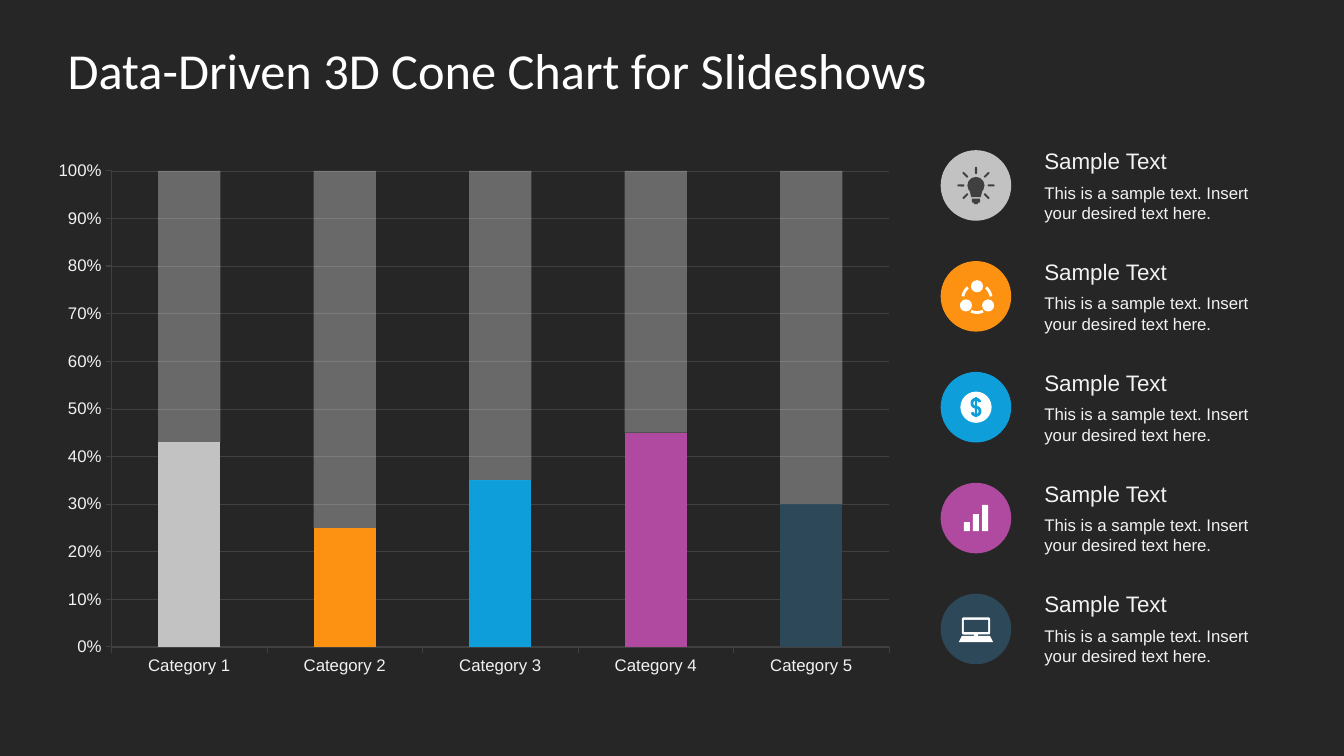
from math import cos, radians, sin

from lxml import etree
from pptx import Presentation
from pptx.chart import data
from pptx.dml.color import RGBColor
from pptx.enum import chart as chart_enum, shapes, text
from pptx.oxml import ns
from pptx.util import Inches, Pt

COLORS = {
    "background": "262626", "white": "FFFFFF", "body": "F2F2F2", "dark": "404040",
    "gray": "C2C2C2", "orange": "FD9212", "blue": "0E9EDA", "purple": "B04AA0",
    "navy": "2D4859",
}
RGB = {name: RGBColor.from_string(value) for name, value in COLORS.items()}
ACCENTS = ["gray", "orange", "blue", "purple", "navy"]
SHAPE = shapes.MSO_SHAPE

prs = Presentation()
prs.slide_width, prs.slide_height = Inches(13.33), Inches(7.5)
slide = prs.slides.add_slide(prs.slide_layouts[6])
slide.background.fill.solid()
slide.background.fill.fore_color.rgb = RGB["background"]


def add_solid(kind, x, y, width, height, color, rotation=0):
    """Add a borderless shape centred on (x, y)."""
    solid = slide.shapes.add_shape(kind, Inches(x - width / 2), Inches(y - height / 2),
                                   Inches(width), Inches(height))
    solid.fill.solid()
    solid.fill.fore_color.rgb = RGB[color]
    solid.line.fill.background()
    solid.shadow.inherit = False
    solid.rotation = rotation
    return solid


def add_arc(x, y, radius, start, end, color, weight):
    """Stroke an arc; angles are degrees clockwise from the right."""
    angles = [radians(start + (end - start) * step / 24) for step in range(25)]
    points = [(Inches(x + radius * cos(a)), Inches(y + radius * sin(a))) for a in angles]
    builder = slide.shapes.build_freeform(*points[0])
    builder.add_line_segments(points[1:], close=False)
    arc = builder.convert_to_shape()
    arc.fill.background()
    arc.line.color.rgb = RGB[color]
    arc.line.width = Pt(weight)
    arc.shadow.inherit = False


# Chart
shares = [43, 25, 35, 45, 30]
chart_data = data.CategoryChartData()
chart_data.categories = [f"Category {n}" for n in range(1, 6)]
chart_data.add_series("Series 1", shares)
chart_data.add_series("Series 2", [100 - share for share in shares])
chart = slide.shapes.add_chart(
    chart_enum.XL_CHART_TYPE.COLUMN_STACKED_100,
    Inches(0.41), Inches(1.5), Inches(8.58), Inches(5.3), chart_data).chart
chart.has_legend = False
chart.has_title = False
chart.font.name, chart.font.size = "Arial", Pt(12)
chart.font.color.rgb = RGB["body"]

plot = chart.plots[0]
plot.gap_width, plot.overlap = 150, 100
plot.vary_by_categories = False
filled, remainder = plot.series
for index, accent in enumerate(ACCENTS):
    bar = filled.points[index].format.fill
    bar.solid()
    bar.fore_color.rgb = RGB[accent]
remainder.format.fill.solid()
remainder.format.fill.fore_color.rgb = RGB["white"]
remainder_color = remainder._element.find(".//" + ns.qn("a:srgbClr"))
etree.SubElement(remainder_color, ns.qn("a:alpha"), val="31000")

for axis in (chart.category_axis, chart.value_axis):
    axis.major_tick_mark = chart_enum.XL_TICK_MARK.OUTSIDE
    axis.format.line.color.rgb = RGB["dark"]
    axis.format.line.width = Pt(0.75)
chart.value_axis.tick_labels.number_format = "0%"
chart.value_axis.tick_labels.number_format_is_linked = False
chart.value_axis.has_major_gridlines = True
gridline = chart.value_axis.major_gridlines.format.line
gridline.color.rgb = RGB["dark"]
gridline.width = Pt(0.25)

# Discs behind the icons
ICON_X, FIRST_Y, ROW_STEP = 9.68, 1.84, 1.1
icon_ys = [FIRST_Y + ROW_STEP * row for row in range(5)]
for y, accent in zip(icon_ys, ACCENTS):
    add_solid(SHAPE.OVAL, ICON_X, y, 0.7, 0.7, accent)
bulb_y, network_y, dollar_y, bars_y, laptop_y = icon_ys

# Light bulb
for angle in (0, 45, 135, 180, 225, 270, 315):
    ray = add_solid(SHAPE.ROUNDED_RECTANGLE, ICON_X + 0.15 * cos(radians(angle)),
                    bulb_y + 0.15 * sin(radians(angle)), 0.07, 0.02, "dark", angle)
    ray.adjustments[0] = 0.5
add_solid(SHAPE.OVAL, ICON_X, bulb_y, 0.17, 0.17, "dark")
add_solid(SHAPE.TRAPEZOID, ICON_X, bulb_y + 0.08, 0.13, 0.07, "dark", 180)
add_solid(SHAPE.ROUNDED_RECTANGLE, ICON_X, bulb_y + 0.15, 0.08, 0.04, "dark")
add_solid(SHAPE.ROUNDED_RECTANGLE, ICON_X, bulb_y + 0.17, 0.04, 0.03, "dark")

# Network
for dx, dy in ((0.01, -0.1), (-0.1, 0.09), (0.12, 0.09)):
    add_solid(SHAPE.OVAL, ICON_X + dx, network_y + dy, 0.12, 0.12, "white")
for start, end in ((65, 115), (188, 230), (310, 352)):
    add_arc(ICON_X + 0.01, network_y + 0.02, 0.14, start, end, "white", 2)

# Dollar coin
add_solid(SHAPE.OVAL, ICON_X, dollar_y, 0.31, 0.31, "white")
add_arc(ICON_X, dollar_y - 0.04, 0.04, -15, -270, "blue", 2)
add_arc(ICON_X, dollar_y + 0.04, 0.04, -90, 165, "blue", 2)
add_solid(SHAPE.RECTANGLE, ICON_X, dollar_y, 0.02, 0.2, "blue")

# Rising bars
for dx, height in ((-0.09, 0.09), (0, 0.17), (0.09, 0.26)):
    bar = add_solid(SHAPE.ROUNDED_RECTANGLE, ICON_X + dx, bars_y + 0.13 - height / 2,
                    0.06, height, "white")
    bar.adjustments[0] = 0.1

# Laptop
screen = add_solid(SHAPE.ROUNDED_RECTANGLE, ICON_X, laptop_y - 0.03, 0.28, 0.17, "white")
screen.adjustments[0] = 0.1
add_solid(SHAPE.RECTANGLE, ICON_X, laptop_y - 0.03, 0.24, 0.12, "navy")
add_solid(SHAPE.RECTANGLE, ICON_X, laptop_y + 0.06, 0.04, 0.04, "white")
add_solid(SHAPE.TRAPEZOID, ICON_X, laptop_y + 0.1, 0.34, 0.06, "white").adjustments[0] = 0.5

# Title and captions: left, top, width, height, words, font, size, color
wordings = [(0.67, 0.3, 12, 0.78, "Data-Driven 3D Cone Chart for Slideshows",
             "Calibri", 36, "white")]
for y in icon_ys:
    wordings += [
        (10.26, y - 0.43, 2.36, 0.37, "Sample Text", "Arial", 16, "body"),
        (10.26, y - 0.08, 2.36, 0.5, "This is a sample text. Insert your desired text here.",
         "Arial", 12, "body"),
    ]
for left, top, width, height, words, font_name, size, color in wordings:
    frame = slide.shapes.add_textbox(*map(Inches, (left, top, width, height))).text_frame
    frame.word_wrap = True
    if font_name == "Calibri":
        frame.margin_left = frame.margin_right = 0
        frame.vertical_anchor = text.MSO_ANCHOR.MIDDLE
    run = frame.paragraphs[0].add_run()
    run.text = words
    for attribute, value in {"name": font_name, "size": Pt(size)}.items():
        setattr(run.font, attribute, value)
    run.font.color.rgb = RGB[color]

prs.save("out.pptx")
